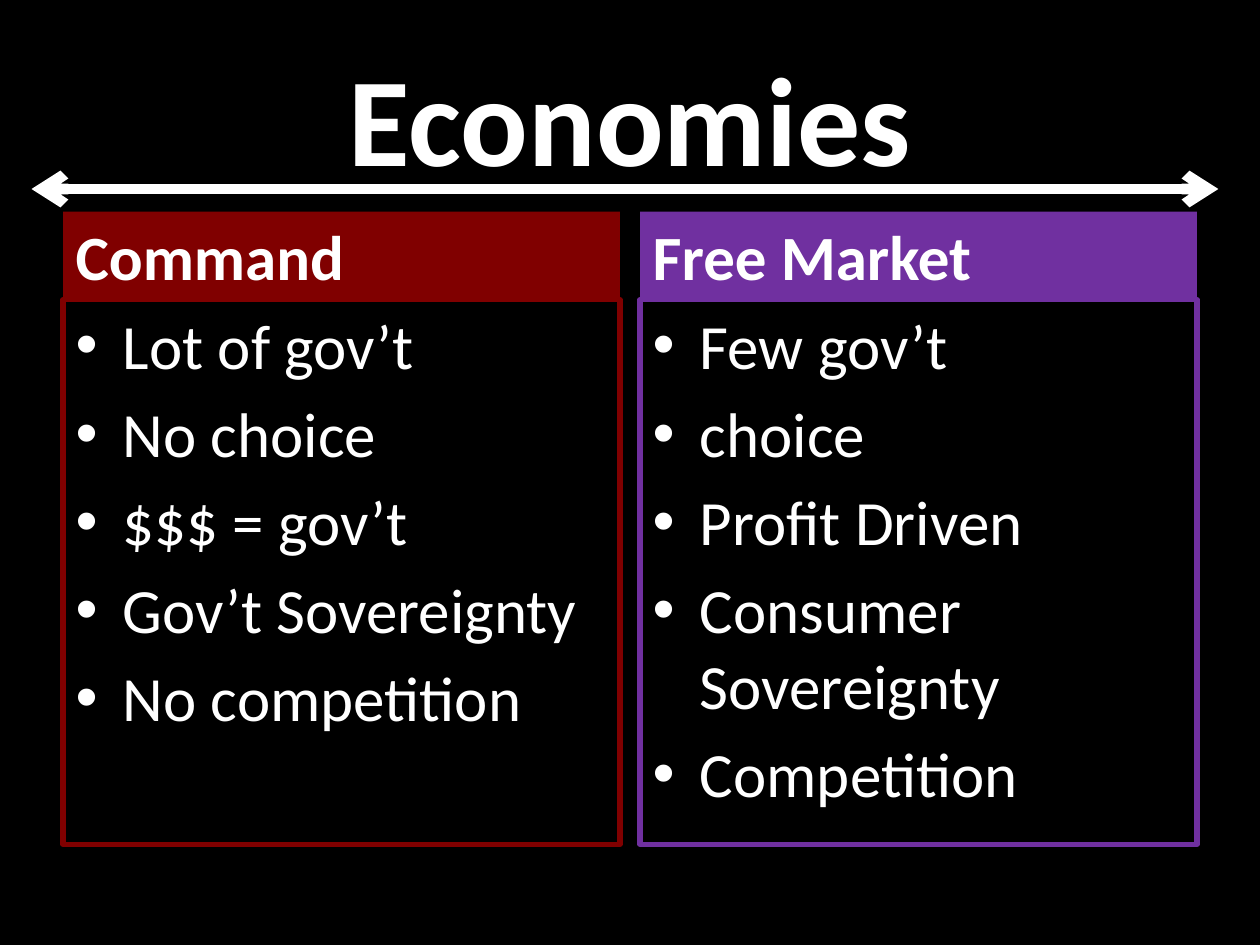
"""Build a slide that compares command and free market economies."""
import pptx
import pptx.dml.color
import pptx.enum.shapes
import pptx.enum.text
import pptx.oxml
import pptx.util

COLORS = {"background": "000000", "text": "FFFFFF",
          "command": "800000", "market": "7030A0"}
FONT = "Calibri"
COMPARISON_LAYOUT = 4
MARGIN, GUTTER, COLUMN_WIDTH = 0.5, 0.16, 4.42
HEADING_TOP, HEADING_HEIGHT, LIST_HEIGHT = 1.68, 0.7, 4.32
ECONOMIES = [
    ("Command", "command",
     ["Lot of gov’t", "No choice", "$$$ = gov’t", "Gov’t Sovereignty",
      "No competition"]),
    ("Free Market", "market",
     ["Few gov’t", "choice", "Profit Driven", "Consumer Sovereignty",
      "Competition"]),
]


def rgb(name):
    """Return the named colour."""
    return pptx.dml.color.RGBColor.from_string(COLORS[name])


def place(holder, left, top, width, height):
    """Move a placeholder to a box given in inches."""
    holder.left, holder.top, holder.width, holder.height = map(
        pptx.util.Inches, (left, top, width, height))


def write(holder, lines, size, bold, anchor):
    """Fill a placeholder with one paragraph per line."""
    frame = holder.text_frame
    frame.text = "\n".join(lines)
    frame.word_wrap = True
    frame.auto_size = pptx.enum.text.MSO_AUTO_SIZE.NONE
    frame.vertical_anchor = anchor
    for paragraph in frame.paragraphs:
        for run in paragraph.runs:
            run.font.name = FONT
            run.font.size = pptx.util.Pt(size)
            run.font.bold = bold
            run.font.color.rgb = rgb("text")


def add_title(slide, title):
    """Write the slide title."""
    holder = slide.shapes.title
    place(holder, MARGIN, 0.3, 9, 1.25)
    write(holder, [title], 72, True, pptx.enum.text.MSO_ANCHOR.MIDDLE)


def add_economy(slide, column, name, color, traits):
    """Fill one column with a coloured heading and an outlined list."""
    heading = slide.placeholders[1 + 2 * column]
    trait_list = slide.placeholders[2 + 2 * column]
    left = MARGIN + column * (COLUMN_WIDTH + GUTTER)
    place(heading, left, HEADING_TOP, COLUMN_WIDTH, HEADING_HEIGHT)
    place(trait_list, left, HEADING_TOP + HEADING_HEIGHT,
          COLUMN_WIDTH, LIST_HEIGHT)
    write(heading, [name], 36, True, pptx.enum.text.MSO_ANCHOR.BOTTOM)
    write(trait_list, traits, 36, False, pptx.enum.text.MSO_ANCHOR.TOP)
    heading.fill.solid()
    heading.fill.fore_color.rgb = rgb(color)
    trait_list.line.color.rgb = rgb(color)
    trait_list.line.width = pptx.util.Pt(3)


def add_spectrum(slide, start, end, height):
    """Draw the double-headed arrow between the two extremes."""
    spectrum = slide.shapes.add_connector(
        pptx.enum.shapes.MSO_CONNECTOR.STRAIGHT,
        *map(pptx.util.Inches, (start, height, end, height)))
    spectrum.line.color.rgb = rgb("text")
    spectrum.line.width = pptx.util.Pt(6)
    outline = spectrum.line._get_or_add_ln()
    namespace = pptx.oxml.ns.nsdecls("a")
    for tip in ("headEnd", "tailEnd"):
        outline.append(pptx.oxml.parse_xml(
            f'<a:{tip} {namespace} type="arrow"/>'))
    outline.addnext(pptx.oxml.parse_xml(f"<a:effectLst {namespace}/>"))


def main():
    """Build and save the slide."""
    deck = pptx.Presentation()
    deck.slide_width = pptx.util.Inches(10)
    deck.slide_height = pptx.util.Inches(7.5)
    slide = deck.slides.add_slide(deck.slide_layouts[COMPARISON_LAYOUT])
    slide.background.fill.solid()
    slide.background.fill.fore_color.rgb = rgb("background")
    add_title(slide, "Economies")
    for column, economy in enumerate(ECONOMIES):
        add_economy(slide, column, *economy)
    add_spectrum(slide, 0.25, 9.67, 1.5)
    deck.save("out.pptx")


if __name__ == "__main__":
    main()
